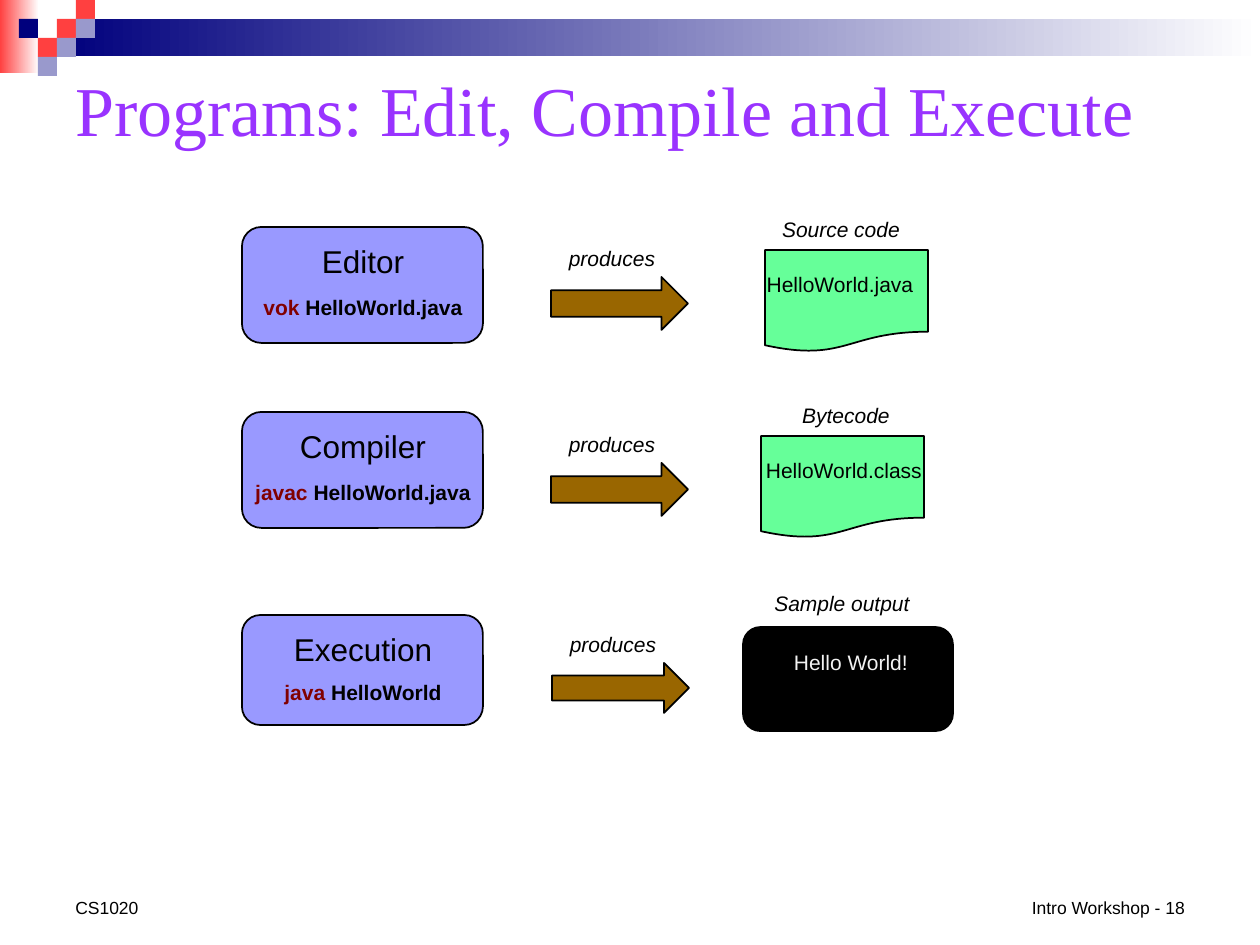
from pptx import Presentation
from pptx import util as u
from pptx.dml.color import RGBColor
from pptx.enum import shapes, text

PX = 914400 / 126
KIND = shapes.MSO_SHAPE
ALIGN = text.PP_ALIGN
ANCHOR = text.MSO_ANCHOR


def hue(code):
    return RGBColor.from_string(code)


def px(*sizes):
    return [u.Emu(round(n * PX)) for n in sizes]


class Deck:
    ink = "000000"
    base = {"name": "Arial", "size": 12, "bold": False, "italic": False}

    def __init__(self):
        self.prs = Presentation()
        self.prs.slide_width, self.prs.slide_height = px(1260, 945)
        self.slide = self.prs.slides.add_slide(self.prs.slide_layouts[6])

    def shape(self, kind, spot, fill, line=True):
        item = self.slide.shapes.add_shape(kind, *px(*spot))
        item.shadow.inherit = False
        if isinstance(fill, tuple):
            item.fill.gradient()
            item.fill.gradient_angle = 0
            for stop, code in zip(item.fill.gradient_stops, fill):
                stop.color.rgb = hue(code)
        else:
            item.fill.solid()
            item.fill.fore_color.rgb = hue(fill)
        if line:
            item.line.color.rgb = hue(self.ink)
            item.line.width = u.Pt(1)
        else:
            item.line.fill.background()
        return item

    def label(self, spot, runs, align=ALIGN.CENTER, anchor=ANCHOR.TOP, wrap=True, **font):
        frame = self.slide.shapes.add_textbox(*px(*spot)).text_frame
        frame.word_wrap = wrap
        frame.vertical_anchor = anchor
        para = frame.paragraphs[0]
        para.alignment = align
        style = {**self.base, **font}
        style["size"] = u.Pt(style["size"])
        color = style.pop("color", self.ink)
        for words, code in [(runs, color)] if isinstance(runs, str) else runs:
            run = para.add_run()
            run.text = words
            run.font.color.rgb = hue(code)
            for key, val in style.items():
                setattr(run.font, key, val)

    def middle(self, mid, top, wide, runs, **font):
        self.label((mid - wide / 2, top, wide, 38), runs, **font)

    def banner(self):
        self.shape(KIND.RECTANGLE, (0, 0, 39, 73), ("FF4040", "FFFFFF"), False)
        self.shape(KIND.RECTANGLE, (57, 19, 1203, 37), ("00007D", "FFFFFF"), False)
        tiles = {
            "FF4040": [(3, 1), (4, 0), (2, 2)],
            "9999CC": [(4, 1), (3, 2), (2, 3)],
            "00007D": [(1, 1)],
        }
        for code, cells in tiles.items():
            for col, row in cells:
                self.shape(KIND.RECTANGLE, (19 * col, 19 * row, 19, 19), code, False)

    def stage(self, top, high, name, tool, args):
        box = self.shape(KIND.ROUNDED_RECTANGLE, (242, top, 241, high), "9999FF")
        box.adjustments[0] = 0.167
        self.middle(363, top + 9, 176, name, size=18)
        self.middle(363, top + high / 2 + 3, 247, [(tool, "800000"), (args, self.ink)], bold=True)

    def arrow(self, left, top, high):
        self.shape(KIND.RIGHT_ARROW, (left, top, 137, high), "996600")
        self.middle(left + 61, top - 38, 152, "produces", italic=True)

    def result(self, kind, spot, fill, title, words, color):
        item = self.shape(kind, spot, fill)
        if kind == KIND.ROUNDED_RECTANGLE:
            item.adjustments[0] = 0.167
        (name, mid, top), (body, core, low) = title, words
        self.middle(mid, top, 173, name, italic=True)
        self.middle(core, low, 190, body, color=color)


def main():
    deck = Deck()
    deck.banner()
    deck.label((63, 53, 1134, 111), "Programs: Edit, Compile and Execute", align=ALIGN.LEFT,
               anchor=ANCHOR.MIDDLE, name="Times New Roman", size=40, color="9933FF")

    doc, screen = KIND.FLOWCHART_DOCUMENT, KIND.ROUNDED_RECTANGLE
    green, light = "66FF99", "F2F2F2"
    rows = [
        ((227, 116, "Editor", "vok ", "HelloWorld.java"), (551, 277, 53),
         (doc, (765, 250, 163, 102), green, ("Source code", 841, 210),
          ("HelloWorld.java ", 843, 265), deck.ink)),
        ((412, 116, "Compiler", "javac", " HelloWorld.java"), (551, 463, 53),
         (doc, (761, 436, 163, 102), green, ("Bytecode", 846, 396),
          ("HelloWorld.class", 844, 451), deck.ink)),
        ((615, 110, "Execution", "java ", "HelloWorld"), (552, 663, 50),
         (screen, (743, 627, 210, 104), "000000", ("Sample output", 842, 584),
          ("Hello World!", 851, 643), light)),
    ]
    for step, link, made in rows:
        deck.stage(*step)
        deck.arrow(*link)
        deck.result(*made)

    foot = {"anchor": ANCHOR.BOTTOM, "size": 10}
    deck.label((63, 890, 399, 34), "CS1020", align=ALIGN.LEFT, **foot)
    deck.label((1017, 890, 180, 34), "Intro Workshop - 18", align=ALIGN.RIGHT, wrap=False, **foot)
    deck.prs.save("out.pptx")


if __name__ == "__main__":
    main()
